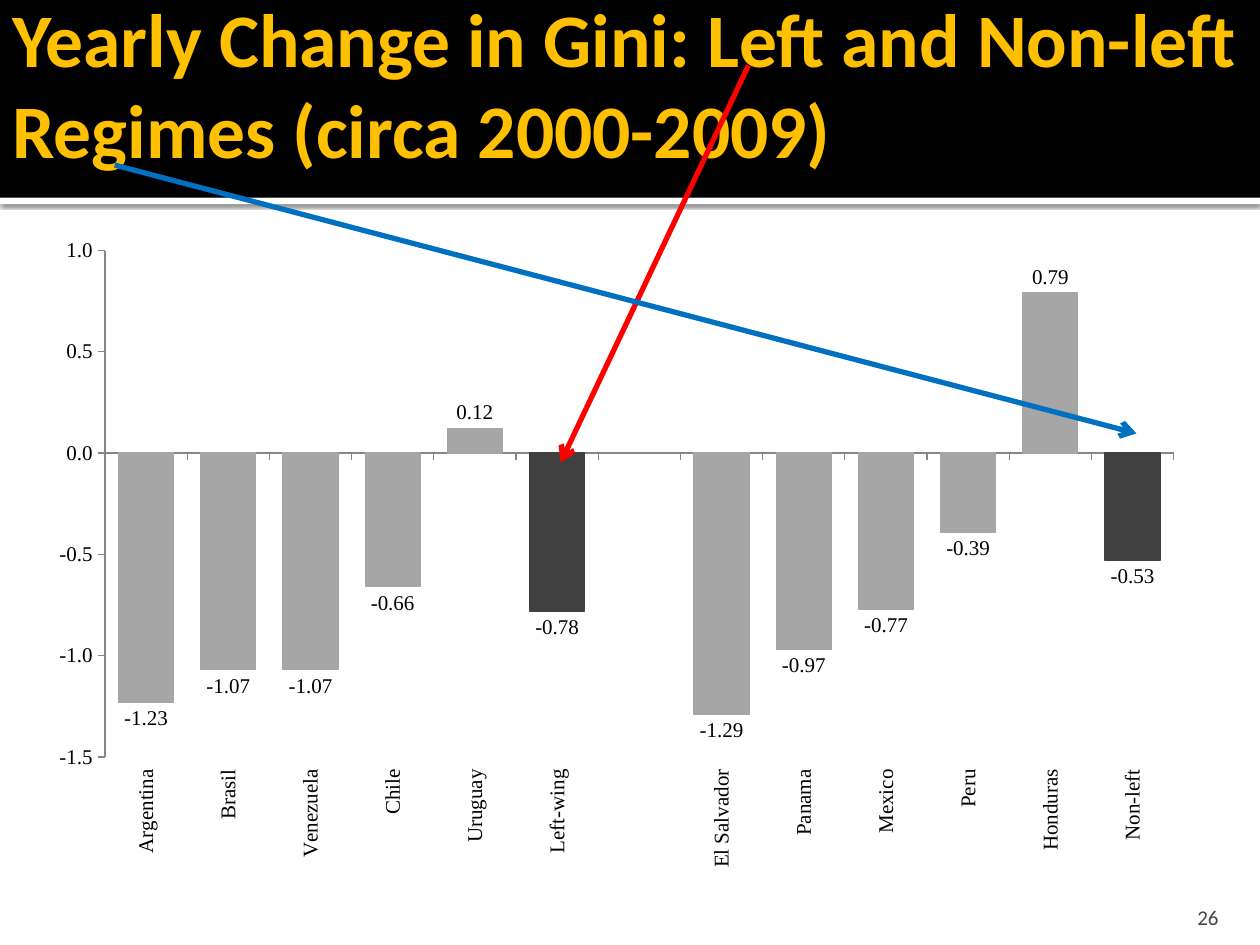
from lxml import etree
from pptx import Presentation
from pptx.chart.data import CategoryChartData
from pptx.dml.color import RGBColor
from pptx.enum import chart as ch, shapes, text
from pptx.oxml import parse_xml
from pptx.oxml.ns import nsdecls, qn
from pptx.util import Inches, Pt


def rgb(code):
    return RGBColor.from_string(code)


def write(box, words, size, color, anchor):
    """Fill a text box with one Calibri paragraph and return both parts."""
    frame = box.text_frame
    frame.word_wrap = True
    frame.vertical_anchor = anchor
    para = frame.paragraphs[0]
    para.text = words
    para.font.name = "Calibri"
    para.font.size = Pt(size)
    para.font.color.rgb = rgb(color)
    return frame, para


deck = Presentation()
deck.slide_width, deck.slide_height = Inches(10), Inches(7.5)
slide = deck.slides.add_slide(deck.slide_layouts[6])
items = slide.shapes

# Title band with a shaded white strip under it
for top, high, color in [(1.57, 0.05, "FFFFFF"), (0, 1.57, "000000")]:
    band = items.add_shape(shapes.MSO_SHAPE.RECTANGLE, 0, Inches(top),
                           Inches(10), Inches(high))
    band.shadow.inherit = False
    band.fill.solid()
    band.fill.fore_color.rgb = rgb(color)
    band.line.fill.background()
    if top:
        glow = band._element.spPr.find(qn("a:effectLst"))
        glow.append(parse_xml(
            f'<a:outerShdw {nsdecls("a")} blurRad="{Pt(2.5)}" dist="{Pt(0.8)}" '
            'dir="5400000" algn="t" rotWithShape="0"><a:srgbClr val="000000">'
            '<a:alpha val="60000"/></a:srgbClr></a:outerShdw>'))

title = items.add_textbox(0, Inches(0.17), Inches(10), Inches(1.69))
frame, para = write(
    title, "Yearly Change in Gini: Left and Non-left Regimes (circa 2000-2009)\v",
    43.2, "FFC000", text.MSO_ANCHOR.MIDDLE)
frame.margin_right = Inches(0.05)
para.font.bold = True

number = items.add_textbox(Inches(8.97), Inches(7.08), Inches(0.8), Inches(0.3))
frame, para = write(number, "26", 12, "454545", text.MSO_ANCHOR.BOTTOM)
frame.margin_bottom = 0
para.alignment = text.PP_ALIGN.RIGHT

# Column chart
rows = [("Argentina", -1.23), ("Brasil", -1.07), ("Venezuela", -1.07),
        ("Chile", -0.66), ("Uruguay", 0.12), ("Left-wing", -0.78), ("", None),
        ("El Salvador", -1.29), ("Panama", -0.97), ("Mexico", -0.77),
        ("Peru", -0.39), ("Honduras", 0.79), ("Non-left", -0.53)]
data = CategoryChartData()
data.categories = [name for name, _ in rows]
data.add_series("Series 1", [value for _, value in rows])
chart = items.add_chart(ch.XL_CHART_TYPE.COLUMN_CLUSTERED, Inches(0.28),
                        Inches(1.78), Inches(9.22), Inches(5.22), data).chart
chart.has_legend = chart.has_title = False
chart.font.name = "Times New Roman"
chart.font.size = Pt(12)
chart.font.color.rgb = rgb("000000")

area = chart._chartSpace.chart.plotArea
for old in area.findall(qn("c:layout")):
    area.remove(old)
layout = etree.Element(qn("c:layout"))
manual = etree.SubElement(layout, qn("c:manualLayout"))
for tag, val in [("layoutTarget", "inner"), ("xMode", "edge"),
                 ("yMode", "edge"), ("x", "0.06"), ("y", "0.04"),
                 ("w", "0.92"), ("h", "0.77")]:
    etree.SubElement(manual, qn(f"c:{tag}")).set("val", val)
area.insert(0, layout)

for axis in (chart.category_axis, chart.value_axis):
    axis.has_major_gridlines = False
    axis.major_tick_mark = ch.XL_TICK_MARK.OUTSIDE
    axis.format.line.color.rgb = rgb("868686")
    axis.format.line.width = Pt(0.75)
cats, scale = chart.category_axis, chart.value_axis
cats.tick_label_position = ch.XL_TICK_LABEL_POSITION.LOW
cats._element.get_or_add_txPr().find(qn("a:bodyPr")).set("rot", "-5400000")
scale.minimum_scale, scale.maximum_scale, scale.major_unit = -1.5, 1, 0.5
scale.tick_labels.number_format = "0.0"
scale.tick_labels.number_format_is_linked = False

plot = chart.plots[0]
plot.gap_width = 50
plot.vary_by_categories = False
bars = plot.series[0]
bars.invert_if_negative = False
fills = [(bars, "A6A6A6")]
fills += [(bars.points[i], "404040") for i, (name, _) in enumerate(rows)
          if name in ("Left-wing", "Non-left")]
for part, color in fills:
    part.format.fill.solid()
    part.format.fill.fore_color.rgb = rgb(color)
    part.format.line.color.rgb = rgb(color)
    part.format.line.width = Pt(0.75)
labels = bars.data_labels
labels.show_value = True
labels.number_format = "#,##0.00"
labels.number_format_is_linked = False
labels.position = ch.XL_LABEL_POSITION.OUTSIDE_END

# Arrows to the two averages
for ends, color in [((5.94, 0.52, 4.45, 3.67), "FF0000"),
                    ((0.91, 1.31, 9.02, 3.44), "0070C0")]:
    arrow = items.add_connector(shapes.MSO_CONNECTOR.STRAIGHT,
                                *[Inches(n) for n in ends])
    arrow.line.color.rgb = rgb(color)
    arrow.line.width = Pt(3)
    etree.SubElement(arrow.line._get_or_add_ln(), qn("a:tailEnd")).set("type", "arrow")
    etree.SubElement(arrow._element.spPr, qn("a:effectLst"))

deck.save("out.pptx")
